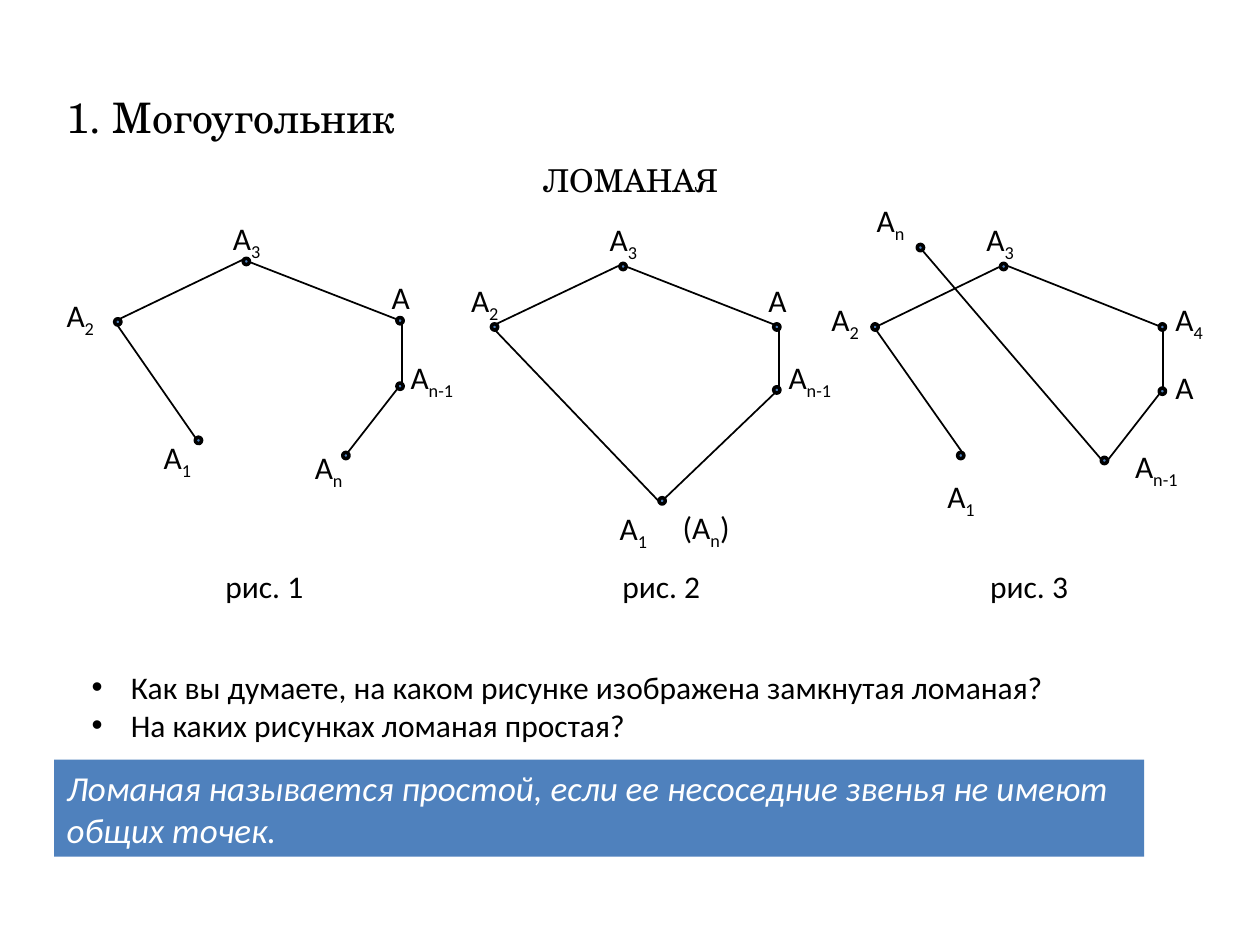
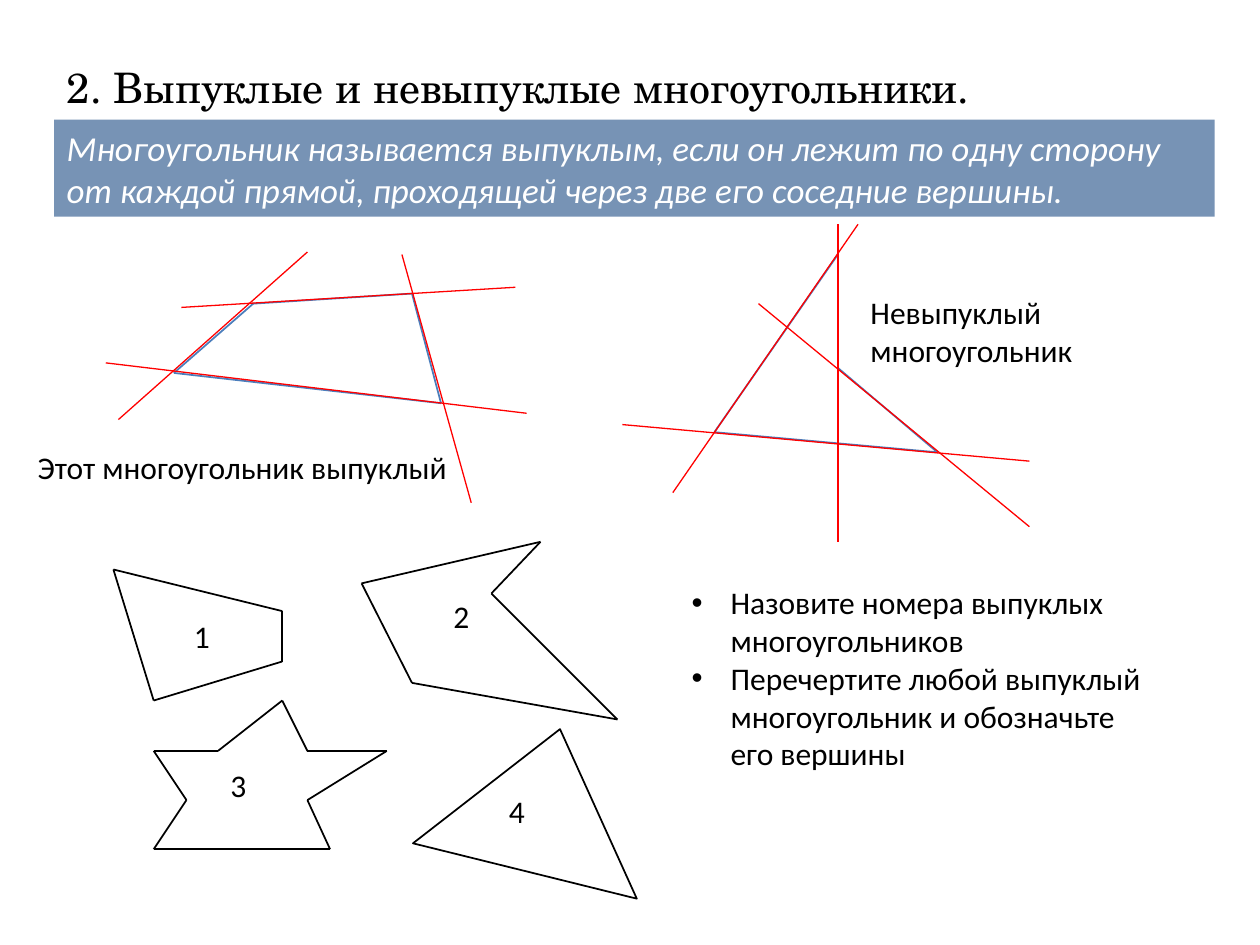
import itertools
from dataclasses import dataclass

import lxml.etree
import pptx
import pptx.dml.color
import pptx.enum.shapes
import pptx.enum.text
import pptx.oxml.ns
import pptx.shapes.autoshape
import pptx.slide
import pptx.util

Inches = pptx.util.Inches
Point = tuple[float, float]

BLACK = "000000"
WHITE = "FFFFFF"
RED = "FF0000"
BLUE = "4F81BD"
EDGE_BLUE = "4B7EBC"
BAND_BLUE = "376092"
BODY_FONT = "Calibri"
TITLE_FONT = "TeX Gyre Schola"
LEFT_EDGE = 0.43
DOT_SIZE = 0.05
BULLET_INDENT = 0.31


@dataclass(frozen=True)
class Label:
    left: float
    top: float
    text: str
    subscript: str = ""
    ending: str = ""
    width: float = 0.5


@dataclass(frozen=True)
class Polyline:
    points: list[Point]
    closed: bool = True
    colour: str = BLACK


@dataclass(frozen=True)
class Figure:
    polyline: Polyline
    dots: list[Point]
    labels: list[Label]


FIGURES = [
    Figure(
        Polyline([(1.59, 3.53), (0.91, 2.55), (1.93, 2.06), (3.19, 2.55), (3.19, 3.04), (2.73, 3.63)], False),
        [(1.55, 3.47), (0.91, 2.53), (1.93, 2.05), (3.15, 2.52), (3.15, 3.04), (2.72, 3.59)],
        [
            Label(0.43, 2.3, "A", "2"),
            Label(1.75, 1.69, "A", "3"),
            Label(3.01, 2.16, "A"),
            Label(3.16, 2.79, "A", "n-1", width=0.58),
            Label(1.2, 3.43, "A", "1"),
            Label(2.4, 3.51, "A", "n"),
            Label(1.69, 4.45, "рис. 1", width=1.05),
        ],
    ),
    Figure(
        Polyline([(5.24, 3.99), (3.9, 2.59), (4.93, 2.1), (6.18, 2.59), (6.18, 3.09)]),
        [(3.9, 2.57), (4.92, 2.09), (6.14, 2.57), (6.14, 3.07), (5.23, 3.95)],
        [
            Label(4.82, 3.99, "A", "1"),
            Label(3.64, 2.18, "A", "2"),
            Label(4.74, 1.7, "A", "3"),
            Label(6, 2.18, "A"),
            Label(6.16, 2.79, "A", "n-1", width=0.65),
            Label(5.32, 3.98, "(A", "n", ")", 0.63),
            Label(4.84, 4.45, "рис. 2", width=1.05),
        ],
    ),
    Figure(
        Polyline(
            [(7.63, 3.58), (6.94, 2.6), (7.97, 2.1), (9.23, 2.6), (9.23, 3.09), (8.77, 3.68), (7.28, 1.94)], False
        ),
        [(7.6, 3.59), (6.92, 2.57), (7.94, 2.09), (9.2, 2.57), (7.28, 1.94), (8.74, 3.63), (9.2, 3.08)],
        [
            Label(7.42, 3.74, "A", "1"),
            Label(6.5, 2.33, "A", "2"),
            Label(7.73, 1.7, "A", "3"),
            Label(9.23, 2.33, "A", "4"),
            Label(9.23, 2.87, "A"),
            Label(8.91, 3.5, "A", "n-1", width=0.65),
            Label(6.86, 1.55, "A", "n"),
            Label(7.76, 4.45, "рис. 3", width=1.05),
        ],
    ),
]

EXAMPLE_POLYGONS = [
    Polyline([(1.38, 2.96), (2.01, 2.41), (3.27, 2.33), (3.5, 3.2)], colour=EDGE_BLUE),
    Polyline([(6.65, 2.02), (5.67, 3.43), (7.44, 3.59), (6.65, 2.92)], colour=EDGE_BLUE),
]

EXTENDED_SIDES = [
    ((0.94, 3.33), (2.44, 2)),
    ((1.44, 2.44), (4.09, 2.28)),
    ((3.74, 3.99), (3.19, 2.02)),
    ((0.84, 2.88), (4.18, 3.28)),
    ((5.34, 3.91), (6.81, 1.78)),
    ((4.94, 3.37), (8.17, 3.66)),
    ((6.65, 4.3), (6.65, 1.78)),
    ((6.02, 2.41), (8.17, 4.18)),
]

NUMBERED_POLYGONS = [
    Polyline([(1.22, 5.56), (0.9, 4.52), (2.24, 4.85), (2.24, 5.25)]),
    Polyline([(3.27, 5.42), (2.87, 4.63), (4.29, 4.3), (3.9, 4.71), (4.9, 5.71)]),
    Polyline(
        [
            (1.73, 5.96), (2.24, 5.56), (2.44, 5.96), (3.07, 5.96), (2.44, 6.35),
            (2.62, 6.74), (1.22, 6.74), (1.48, 6.35), (1.22, 5.96),
        ]
    ),
]

POLYGON_NUMBERS = [
    Label(1.44, 4.85, "1", width=0.3),
    Label(3.5, 4.69, "2", width=0.3),
    Label(1.73, 6.03, "3", width=0.43),
    Label(3.94, 6.24, "4", width=0.46),
]


def rgb(colour: str) -> pptx.dml.color.RGBColor:
    return pptx.dml.color.RGBColor.from_string(colour)


def add_xml(parent, tag: str, **attributes: str):
    return lxml.etree.SubElement(parent, pptx.oxml.ns.qn(tag), attributes)


def write_text(frame, text: str, *, size: float = 18, font: str = BODY_FONT, colour: str = BLACK,
               italic: bool = False, centred: bool = False, bulleted: bool = False, wrap: bool = True,
               subscript: str = "", ending: str = "") -> None:
    frame.word_wrap = wrap
    frame.auto_size = pptx.enum.text.MSO_AUTO_SIZE.SHAPE_TO_FIT_TEXT
    alignment = pptx.enum.text.PP_ALIGN
    for index, line in enumerate(text.split("\n")):
        paragraph = frame.add_paragraph() if index else frame.paragraphs[0]
        paragraph.alignment = alignment.CENTER if centred else alignment.LEFT
        for position, part in enumerate((line, subscript, ending)):
            if not part:
                continue
            run = paragraph.add_run()
            run.text = part
            run.font.size = pptx.util.Pt(size)
            run.font.name = font
            run.font.italic = italic
            run.font.color.rgb = rgb(colour)
            if position == 1:
                run.font._element.set("baseline", "-25000")
        if bulleted:
            properties = paragraph._p.get_or_add_pPr()
            properties.set("marL", str(Inches(BULLET_INDENT)))
            properties.set("indent", str(-Inches(BULLET_INDENT)))
            add_xml(properties, "a:buFont", typeface="Arial")
            add_xml(properties, "a:buChar", char="•")


def add_text(slide: pptx.slide.Slide, left: float, top: float, width: float, height: float,
             text: str, **text_format) -> None:
    box = slide.shapes.add_textbox(Inches(left), Inches(top), Inches(width), Inches(height))
    write_text(box.text_frame, text, **text_format)


def add_label(slide: pptx.slide.Slide, label: Label) -> None:
    add_text(slide, label.left, label.top, label.width, 0.4, label.text,
             subscript=label.subscript, ending=label.ending, wrap=False)


def add_titled_slide(presentation, title: str, top: float, width: float) -> pptx.slide.Slide:
    slide = presentation.slides.add_slide(presentation.slide_layouts.get_by_name("Title Only"))
    shape = slide.shapes.title
    shape.left, shape.top = Inches(LEFT_EDGE), Inches(top)
    shape.width, shape.height = Inches(width), Inches(0.5)
    shape.text_frame.vertical_anchor = pptx.enum.text.MSO_ANCHOR.TOP
    write_text(shape.text_frame, title, size=24, font=TITLE_FONT, wrap=False)
    return slide


def add_line(shapes, start: Point, end: Point, colour: str, width: float) -> None:
    ends = [Inches(value) for value in (*start, *end)]
    line = shapes.add_connector(pptx.enum.shapes.MSO_CONNECTOR.STRAIGHT, *ends)
    line.line.color.rgb = rgb(colour)
    line.line.width = pptx.util.Pt(width)
    add_xml(line._element.spPr, "a:effectLst")


def add_polyline(slide: pptx.slide.Slide, polyline: Polyline) -> None:
    group = slide.shapes.add_group_shape()
    points = polyline.points + polyline.points[:1] if polyline.closed else polyline.points
    for start, end in itertools.pairwise(points):
        add_line(group.shapes, start, end, polyline.colour, 1)


def add_preset(slide: pptx.slide.Slide, kind, left: float, top: float, width: float, height: float, *,
               fill: str = "", line_width: float = 0) -> pptx.shapes.autoshape.Shape:
    shape = slide.shapes.add_shape(kind, Inches(left), Inches(top), Inches(width), Inches(height))
    shape.shadow.inherit = False
    if fill:
        shape.fill.solid()
        shape.fill.fore_color.rgb = rgb(fill)
    else:
        shape.fill.background()
    if line_width:
        shape.line.color.rgb = rgb(BLACK)
        shape.line.width = pptx.util.Pt(line_width)
    else:
        shape.line.fill.background()
    return shape


def add_definition(slide: pptx.slide.Slide, top: float, width: float, text: str, fill: str,
                   opacity: int = 100) -> None:
    band = add_preset(slide, pptx.enum.shapes.MSO_SHAPE.RECTANGLE, LEFT_EDGE, top, width, 0.77, fill=fill)
    if opacity < 100:
        colour = band._element.spPr.find(".//" + pptx.oxml.ns.qn("a:srgbClr"))
        add_xml(colour, "a:alpha", val=str(opacity * 1000))
    write_text(band.text_frame, text, size=20, colour=WHITE, italic=True)


def build_broken_lines(presentation) -> None:
    slide = add_titled_slide(presentation, "1. Могоугольник", 0.68, 2.83)
    for figure in FIGURES:
        add_polyline(slide, figure.polyline)
        for left, top in figure.dots:
            add_preset(slide, pptx.enum.shapes.MSO_SHAPE.OVAL, left, top, DOT_SIZE, DOT_SIZE,
                       fill=BLUE, line_width=2)
        for label in figure.labels:
            add_label(slide, label)
    add_text(slide, 4.06, 1.23, 1.89, 0.4, "ЛОМАНАЯ", font=TITLE_FONT, centred=True)
    questions = ("Как вы думаете, на каком рисунке изображена замкнутая ломаная?\n"
                 "На каких рисунках ломаная простая?")
    add_text(slide, 0.63, 5.25, 8.37, 0.71, questions, bulleted=True)
    add_definition(slide, 6.03, 8.65,
                   "Ломаная называется простой, если ее несоседние звенья не имеют общих точек.", BLUE)


def build_convex_polygons(presentation) -> None:
    slide = add_titled_slide(presentation, "2. Выпуклые и невыпуклые многоугольники.", 0.44, 7.48)
    add_definition(slide, 0.95, 9.21,
                   "Многоугольник называется выпуклым, если он лежит по одну сторону от каждой прямой, "
                   "проходящей через две его соседние вершины.", BAND_BLUE, opacity=68)
    for polygon in EXAMPLE_POLYGONS:
        add_polyline(slide, polygon)
    for start, end in EXTENDED_SIDES:
        add_line(slide.shapes, start, end, RED, 0.75)
    for polygon in NUMBERED_POLYGONS:
        add_polyline(slide, polygon)
    triangle = add_preset(slide, pptx.enum.shapes.MSO_SHAPE.ISOSCELES_TRIANGLE, 3.39, 5.77, 1.83, 1.16,
                          line_width=1)
    triangle.rotation = 13.9
    for number in POLYGON_NUMBERS:
        add_label(slide, number)
    tasks = ("Назовите номера выпуклых многоугольников\n"
             "Перечертите любой выпуклый многоугольник и обозначьте его вершины")
    add_text(slide, 5.39, 4.58, 3.82, 1.62, tasks, bulleted=True)
    add_text(slide, 0.2, 3.51, 3.52, 0.4, "Этот многоугольник выпуклый", wrap=False)
    add_text(slide, 6.81, 2.28, 2.05, 0.71, "Невыпуклый многоугольник")


def main() -> None:
    presentation = pptx.Presentation()
    presentation.slide_width = Inches(10)
    presentation.slide_height = Inches(7.5)
    build_broken_lines(presentation)
    build_convex_polygons(presentation)
    presentation.save("out.pptx")


if __name__ == "__main__":
    main()
